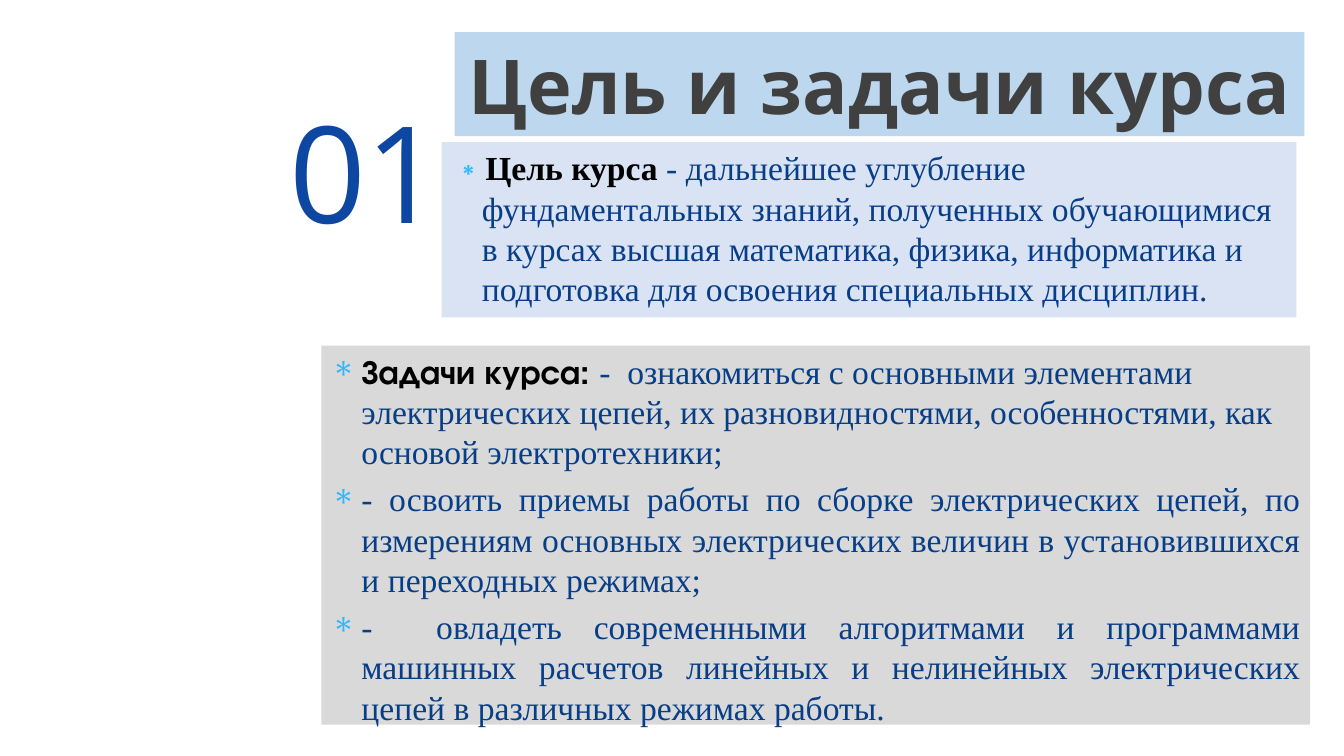
from dataclasses import dataclass

from lxml.etree import SubElement
from pptx import Presentation
from pptx.dml.color import RGBColor
from pptx.enum.shapes import MSO_SHAPE as Shape
from pptx.enum.text import MSO_ANCHOR as Anchor, MSO_AUTO_SIZE as AutoSize, PP_ALIGN as Align
from pptx.oxml.ns import qn
from pptx.util import Cm, Pt


@dataclass(frozen=True)
class Theme:
    """Colours, fonts and type sizes of the slide."""
    title_fill: str = "BDD7EE"
    goal_fill: str = "DAE3F3"
    tasks_fill: str = "D9D9D9"
    title: str = "404040"
    number: str = "0D47A1"
    lead: str = "000000"
    body: str = "073E87"
    bullet: str = "31B6FD"
    heading_font: str = "Open Sans"
    body_font: str = "Times New Roman"
    tasks_font: str = "TeX Gyre Adventor"
    title_size: int = 54
    number_size: int = 96
    body_size: int = 24


THEME = Theme()
GOAL = [("Цель курса ",
         "- дальнейшее углубление фундаментальных знаний, полученных обучающимися в курсах "
         "высшая математика, физика, информатика и подготовка для освоения специальных дисциплин.")]
TASKS = [
    ("Задачи курса: ",
     "-  ознакомиться с основными элементами электрических цепей, их разновидностями, "
     "особенностями, как основой электротехники;"),
    ("", "- освоить приемы работы по сборке электрических цепей, по измерениям основных "
         "электрических величин в установившихся и переходных режимах;"),
    ("", "-  овладеть современными алгоритмами и программами машинных расчетов линейных и "
         "нелинейных электрических цепей в различных режимах работы."),
]


def place(shape, left, top, width, height):
    """Move and size a shape, in centimetres."""
    shape.left, shape.top, shape.width, shape.height = map(Cm, (left, top, width, height))


def fill_panel(shape, color, anchor):
    """Give a panel a plain fill and fixed, wrapped text."""
    shape.fill.solid()
    shape.fill.fore_color.rgb = RGBColor.from_string(color)
    shape.line.fill.background()
    frame = shape.text_frame
    frame.word_wrap = True
    frame.auto_size = AutoSize.NONE
    frame.vertical_anchor = anchor


def format_font(font, name, size, color, bold=False):
    """Set the typeface, size, colour and weight."""
    font.name, font.size, font.bold = name, Pt(size), bold
    font.color.rgb = RGBColor.from_string(color)


def add_bullet(para):
    """Give a paragraph a hanging asterisk bullet."""
    props = para._p.get_or_add_pPr()
    props.set("marL", str(Cm(0.76)))
    props.set("indent", str(-Cm(0.76)))
    color = SubElement(props, qn("a:buClr"))
    SubElement(color, qn("a:srgbClr"), val=THEME.bullet)
    SubElement(props, qn("a:buChar"), char="∗")


def write_list(frame, items, lead_font):
    """Write bulleted items, each with an optional bold lead."""
    for index, (lead, text) in enumerate(items):
        para = frame.add_paragraph() if index else frame.paragraphs[0]
        para.alignment = Align.LEFT if lead else Align.JUSTIFY
        para.space_before = Pt(4.8 if index else 0)
        add_bullet(para)
        if lead:
            span = para.add_run()
            span.text = lead
            format_font(span.font, lead_font, THEME.body_size, THEME.lead, True)
        span = para.add_run()
        span.text = text
        format_font(span.font, THEME.body_font, THEME.body_size, THEME.body)


def write_title(title):
    """Fill the title placeholder."""
    place(title, 11.46, 0.81, 21.41, 2.62)
    fill_panel(title, THEME.title_fill, Anchor.BOTTOM)
    title.text_frame.text = "Цель и задачи курса"
    para = title.text_frame.paragraphs[0]
    para.alignment = Align.CENTER
    para.line_spacing = 0.9
    format_font(para.runs[0].font, THEME.heading_font, THEME.title_size, THEME.title, True)


def add_number(page):
    """Add the large section number."""
    box = page.shapes.add_textbox(Cm(7.04), Cm(2.13), Cm(4.62), Cm(4.37))
    box.text_frame.word_wrap = True
    box.text_frame.text = "01"
    span = box.text_frame.paragraphs[0].runs[0]
    format_font(span.font, THEME.heading_font, THEME.number_size, THEME.number)


def add_tasks(page):
    """Add the panel with the course tasks."""
    panel = page.shapes.add_shape(Shape.RECTANGLE, Cm(8.1), Cm(8.71), Cm(24.92), Cm(9.55))
    panel.shadow.inherit = False
    fill_panel(panel, THEME.tasks_fill, Anchor.TOP)
    write_list(panel.text_frame, TASKS, THEME.tasks_font)


def main():
    """Build and save the slide."""
    deck = Presentation()
    deck.slide_width, deck.slide_height = Cm(33.87), Cm(19.05)
    page = deck.slides.add_slide(deck.slide_layouts[0])
    write_title(page.shapes.title)
    goal = page.placeholders[1]
    place(goal, 11.13, 3.58, 21.54, 4.42)
    fill_panel(goal, THEME.goal_fill, Anchor.TOP)
    write_list(goal.text_frame, GOAL, THEME.body_font)
    add_number(page)
    add_tasks(page)
    deck.save("out.pptx")


if __name__ == "__main__":
    main()
